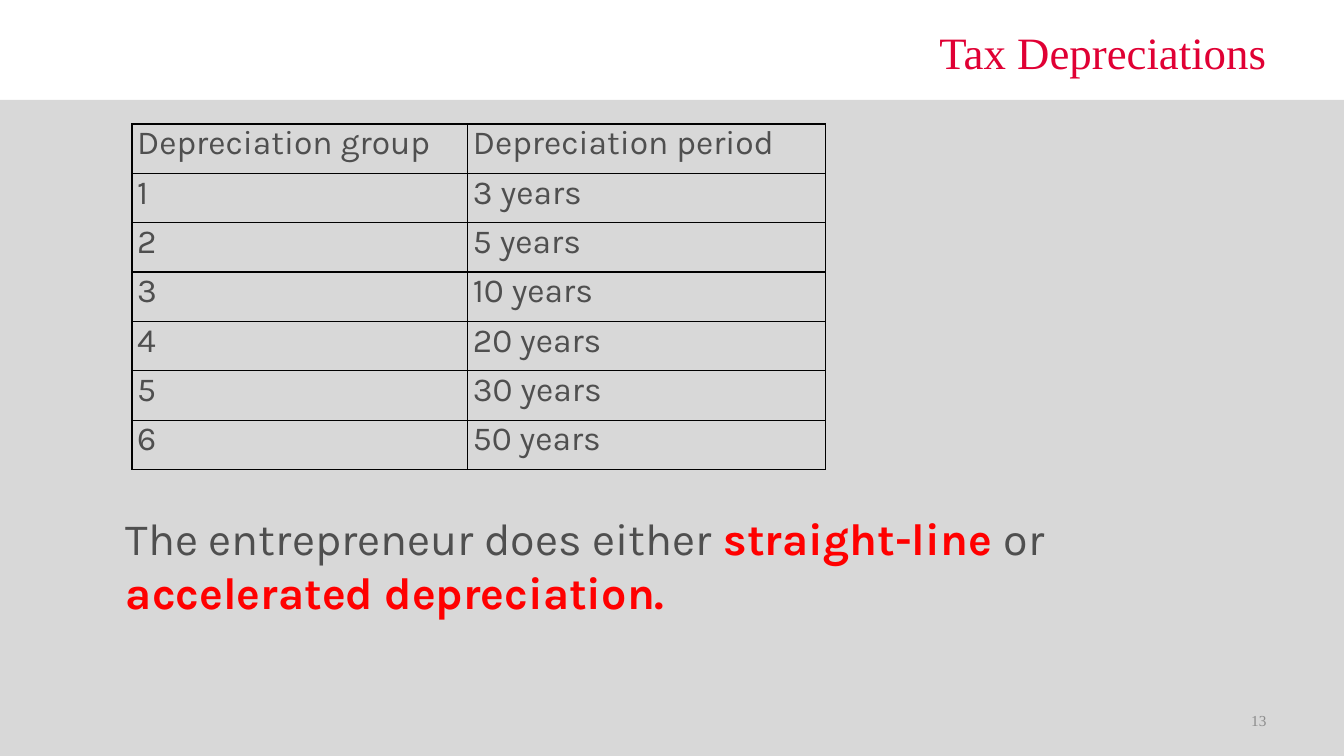
from lxml.etree import SubElement
from pptx import Presentation
from pptx.dml.color import RGBColor
from pptx.enum.shapes import MSO_SHAPE
from pptx.enum.text import MSO_ANCHOR, MSO_AUTO_SIZE, PP_ALIGN
from pptx.oxml.ns import qn
from pptx.util import Inches, Pt

COLORS = {
    "panel": "D8D8D8",
    "title": "E00034",
    "body": "4F4F4F",
    "accent": "FF0000",
    "number": "8C8C8C",
    "border": "000000",
}
SERIF = "Times New Roman"
SANS = "Karla"
YEARS = [3, 5, 10, 20, 30, 50]


class Board:
    def __init__(self, slide):
        self.slide = slide

    def color(self, name):
        return RGBColor.from_string(COLORS[name])

    def add_run(self, para, text, size, font, color, bold=False):
        run = para.add_run()
        run.text = text
        run.font.size = Pt(size)
        run.font.name = font
        run.font.bold = bold
        run.font.color.rgb = self.color(color)

    def panel(self, box, color):
        shape = self.slide.shapes.add_shape(MSO_SHAPE.RECTANGLE, *map(Inches, box))
        shape.shadow.inherit = False
        shape.fill.solid()
        shape.fill.fore_color.rgb = self.color(color)
        shape.line.fill.background()

    def text(self, box, runs, size, font, align=PP_ALIGN.LEFT,
             anchor=MSO_ANCHOR.TOP, fit=MSO_AUTO_SIZE.NONE):
        frame = self.slide.shapes.add_textbox(*map(Inches, box)).text_frame
        frame.word_wrap = True
        frame.auto_size = fit
        frame.vertical_anchor = anchor
        para = frame.paragraphs[0]
        para.alignment = align
        for text, color, bold in runs:
            self.add_run(para, text, size, font, color, bold)

    def border(self, cell):
        props = cell._tc.get_or_add_tcPr()
        for side in ("a:lnL", "a:lnR", "a:lnT", "a:lnB"):
            line = SubElement(props, qn(side), w=str(Pt(1)))
            fill = SubElement(line, qn("a:solidFill"))
            SubElement(fill, qn("a:srgbClr"), val=COLORS["border"])

    def table(self, left, top, widths, height, rows):
        grid = self.slide.shapes.add_table(
            len(rows), len(widths), Inches(left), Inches(top),
            Inches(sum(widths)), Inches(height * len(rows))).table
        grid.first_row = False
        grid.horz_banding = False
        for column, width in zip(grid.columns, widths):
            column.width = Inches(width)
        for line, texts in zip(grid.rows, rows):
            line.height = Inches(height)
            for cell, text in zip(line.cells, texts):
                self.border(cell)
                cell.fill.background()
                cell.margin_left = cell.margin_right = Inches(0.05)
                cell.margin_top = cell.margin_bottom = 0
                para = cell.text_frame.paragraphs[0]
                para.alignment = PP_ALIGN.JUSTIFY
                para.space_after = Pt(6)
                self.add_run(para, text, 24, SANS, "body")


def main():
    deck = Presentation()
    deck.slide_width = Inches(13.33)
    deck.slide_height = Inches(7.5)
    board = Board(deck.slides.add_slide(deck.slide_layouts[6]))

    board.panel((0, 0.99, 13.33, 6.51), "panel")
    board.text((3.4, 0.18, 9.26, 0.66), [("Tax Depreciations", "title", False)],
               32, SERIF, PP_ALIGN.RIGHT, MSO_ANCHOR.MIDDLE)
    rows = [("Depreciation group", "Depreciation period")]
    rows += [(str(group), f"{span} years") for group, span in enumerate(YEARS, 1)]
    board.table(1.31, 1.23, [3.33, 3.55], 0.49, rows)
    board.text((9.55, 6.95, 3.11, 0.4), [("13", "number", False)],
               10.9, SERIF, PP_ALIGN.RIGHT, MSO_ANCHOR.MIDDLE)
    board.text((1.15, 5.02, 9.76, 1.18), [
        ("The entrepreneur does either ", "body", False),
        ("straight-line ", "accent", True),
        ("or ", "body", False),
        ("accelerated depreciation.", "accent", True),
    ], 32, SANS, fit=MSO_AUTO_SIZE.SHAPE_TO_FIT_TEXT)

    deck.save("out.pptx")


if __name__ == "__main__":
    main()
